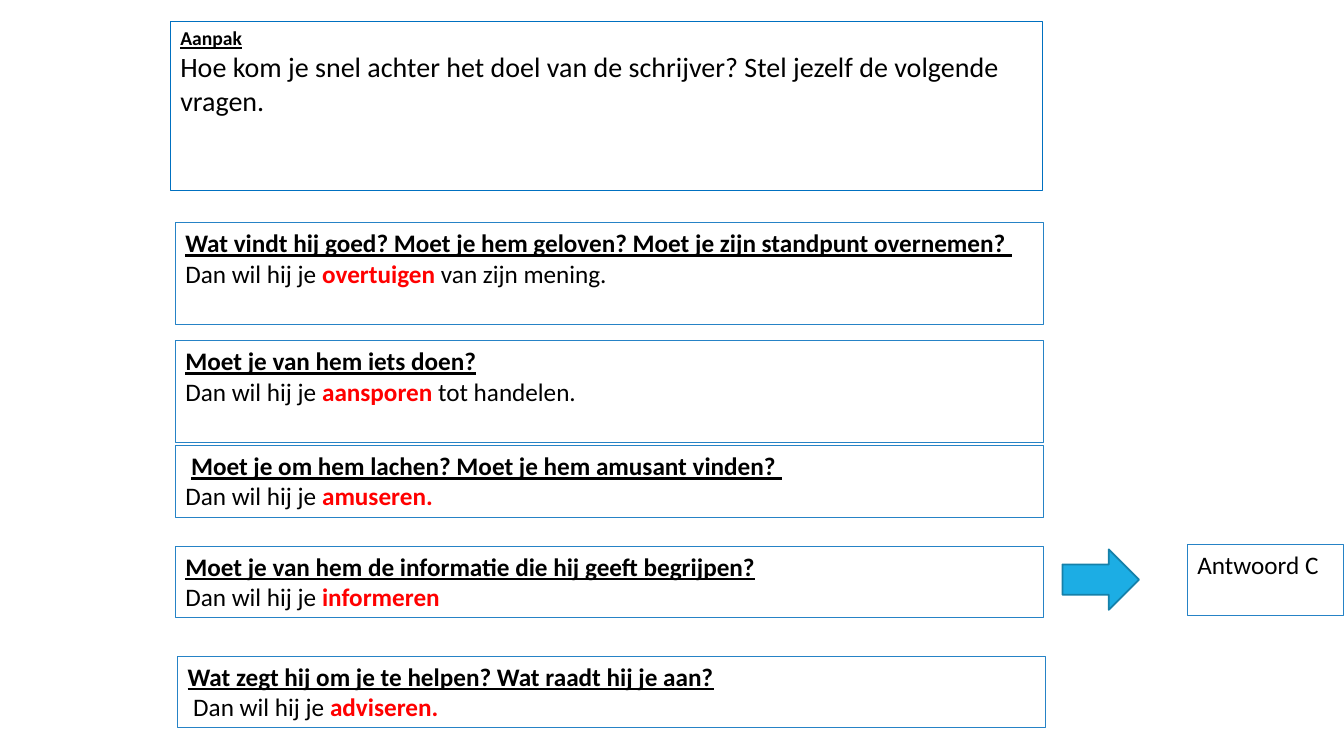
from dataclasses import dataclass

from pptx import Presentation
from pptx.dml.color import RGBColor
from pptx.enum.shapes import MSO_SHAPE as Preset
from pptx.enum.text import MSO_ANCHOR as Anchor, MSO_AUTO_SIZE as AutoSize, PP_ALIGN as Align
from pptx.util import Pt

COLORS = {
    "text": "000000",
    "goal": "FF0000",
    "intro_border": "0070C0",
    "border": "2683C6",
    "arrow": "1CADE4",
    "arrow_border": "1580A9",
}
FORMATS = {
    "plain": {"bold": False, "underline": False},
    "question": {"bold": True, "underline": True},
    "goal": {"bold": True, "underline": False},
}
FRAME_FORMAT = {
    "word_wrap": True,
    "auto_size": AutoSize.NONE,
    "vertical_anchor": Anchor.TOP,
}


@dataclass(frozen=True)
class Span:
    text: str
    style: str = "plain"
    size: float = 18


@dataclass(frozen=True)
class Box:
    left: float
    top: float
    width: float
    height: float
    lines: list[list[Span]]
    border: str = "border"


def color(name: str) -> RGBColor:
    return RGBColor.from_string(COLORS[name])


def add_outlined(shapes, preset, left: float, top: float, width: float,
                 height: float, border: str, weight: float):
    shape = shapes.add_shape(preset, Pt(left), Pt(top), Pt(width), Pt(height))
    shape.shadow.inherit = False
    shape.line.color.rgb = color(border)
    shape.line.width = Pt(weight)
    return shape


def add_span(paragraph, span: Span) -> None:
    run = paragraph.add_run()
    run.text = span.text
    run.font.name = "Calibri"
    run.font.size = Pt(span.size)
    run.font.color.rgb = color("goal" if span.style == "goal" else "text")
    for attribute, value in FORMATS[span.style].items():
        setattr(run.font, attribute, value)


def add_box(shapes, box: Box) -> None:
    rectangle = add_outlined(shapes, Preset.RECTANGLE, box.left, box.top,
                             box.width, box.height, box.border, 0.75)
    rectangle.fill.background()
    frame = rectangle.text_frame
    for attribute, value in FRAME_FORMAT.items():
        setattr(frame, attribute, value)
    for index, line in enumerate(box.lines):
        paragraph = frame.add_paragraph() if index else frame.paragraphs[0]
        paragraph.alignment = Align.LEFT
        for span in line:
            add_span(paragraph, span)


def question_box(top: float, height: float, question: list[Span], goal: str,
                 ending: str = "", opening: str = "Dan wil hij je ",
                 left: float = 125.28) -> Box:
    answer = [Span(opening), Span(goal, "goal")]
    if ending:
        answer.append(Span(ending))
    return Box(left, top, 620, height, [question, answer])


TALL, LOW = 72.72, 51.12

approach = Box(121.68, 15.12, 622.8, 120.96, [
    [Span("Aanpak", "question", 14)],
    [Span("Hoe kom je snel achter het doel van de schrijver? "
          "Stel jezelf de volgende vragen.", size=20)],
], "intro_border")

questions = [
    question_box(159.12, TALL, [Span(
        "Wat vindt hij goed? Moet je hem geloven? Moet je zijn standpunt overnemen? ",
        "question")], "overtuigen", " van zijn mening."),
    question_box(243.36, TALL, [Span("Moet je van hem iets doen?", "question")],
                 "aansporen", " tot handelen."),
    question_box(318.24, LOW, [Span(" "), Span(
        "Moet je om hem lachen? Moet je hem amusant vinden? ", "question")],
        "amuseren."),
    question_box(390.24, LOW, [Span(
        "Moet je van hem de informatie die hij geeft begrijpen?", "question")],
        "informeren"),
    question_box(468.72, LOW, [Span(
        "Wat zegt hij om je te helpen? Wat raadt hij je aan?", "question")],
        "adviseren.", opening=" Dan wil hij je ", left=126.9),
]

answer_c = Box(848.16, 388.8, 111.6, LOW, [[Span("Antwoord C")]])


def main() -> None:
    presentation = Presentation()
    presentation.slide_width, presentation.slide_height = Pt(960), Pt(540)
    shapes = presentation.slides.add_slide(presentation.slide_layouts[6]).shapes

    # Approach, questions and answer
    for box in [approach, *questions, answer_c]:
        add_box(shapes, box)

    # Arrow from the fitting question to the answer
    arrow = add_outlined(shapes, Preset.RIGHT_ARROW, 758.9, 392.4, 54.7, 43.2,
                         "arrow_border", 1.25)
    arrow.fill.solid()
    arrow.fill.fore_color.rgb = color("arrow")

    presentation.save("out.pptx")


if __name__ == "__main__":
    main()
